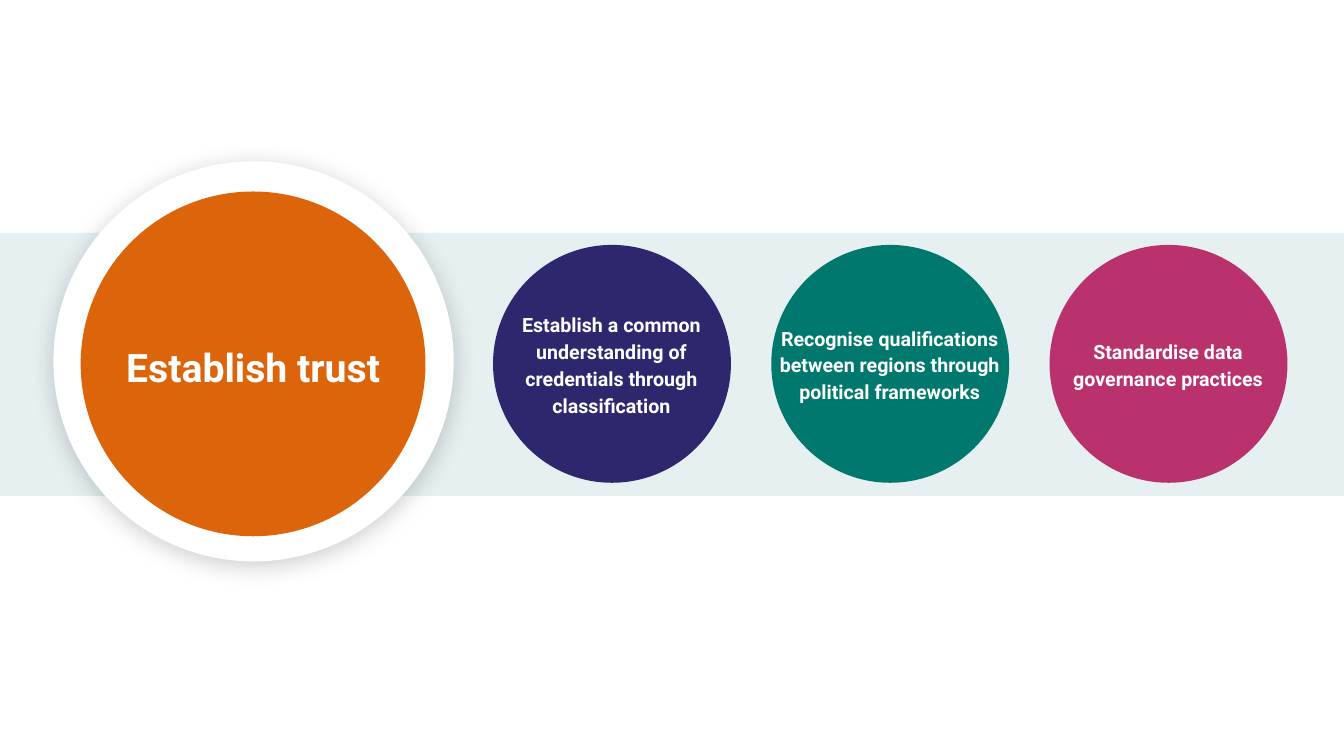
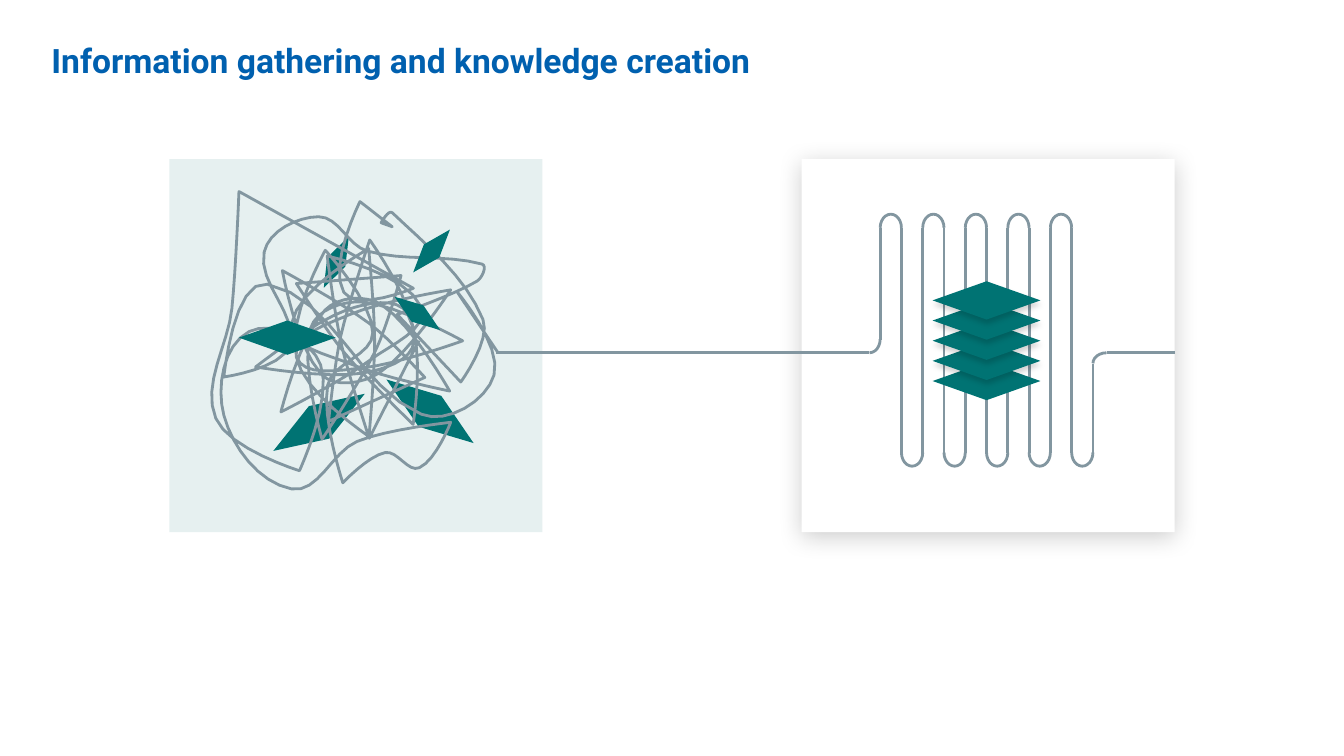
from math import cos, hypot, sin

from lxml import etree
from pptx import Presentation
from pptx.dml.color import RGBColor
from pptx.enum.shapes import MSO_CONNECTOR, MSO_SHAPE
from pptx.enum.text import MSO_ANCHOR, PP_ALIGN
from pptx.oxml.ns import qn
from pptx.util import Inches, Pt

RECT, OVAL = MSO_SHAPE.RECTANGLE, MSO_SHAPE.OVAL
DIAMOND, ARC = MSO_SHAPE.DIAMOND, MSO_SHAPE.ARC
STRAIGHT = MSO_CONNECTOR.STRAIGHT
TOP, MIDDLE = MSO_ANCHOR.TOP, MSO_ANCHOR.MIDDLE
LEFT, CENTER = PP_ALIGN.LEFT, PP_ALIGN.CENTER

FONT = "Roboto"
WHITE = RGBColor(0xFF, 0xFF, 0xFF)
MIST = RGBColor(0xE6, 0xF0, 0xF0)
ORANGE = RGBColor(0xDC, 0x64, 0x0A)
INDIGO = RGBColor(0x2D, 0x28, 0x6E)
GREEN = RGBColor(0x00, 0x78, 0x6D)
MAGENTA = RGBColor(0xB9, 0x32, 0x6E)
TEAL = RGBColor(0x00, 0x73, 0x73)
BLUE = RGBColor(0x00, 0x60, 0xAF)
GREY = RGBColor(0x82, 0x96, 0xA0)

# Shadows: opacity in percent, blur in points
SOFT, TIGHT = (20, 18), (16, 4)

# Slide 1 content
MAIN_GOAL = "Establish trust"
STEPS = [
    ("Establish a common understanding of credentials through classification", INDIGO),
    ("Recognise qualifications between regions through political frameworks", GREEN),
    ("Standardise data governance practices", MAGENTA),
]

# Slide 2 content
TITLE = "Information gathering and knowledge creation"
# Loose diamonds: left, top, width, height, rotation
DIAMONDS_BEHIND = [
    (2.63, 4, 1.07, 0.38, 328),
    (3.05, 2.5, 0.57, 0.2, 115.9),
    (3.73, 3.89, 1.07, 0.38, 36.1),
]
DIAMONDS_IN_FRONT = [
    (2.37, 3.18, 0.96, 0.34, 0),
    (3.86, 3.01, 0.56, 0.2, 36.1),
    (4, 2.39, 0.56, 0.2, 130.6),
]
# Outer loops of the tangled thread, in inches
OUTER_LOOPS = [
    (3.25, 3.82), (3.4, 4.79), (3.82, 4.49), (4.16, 4.64), (4.47, 4.19), (3.54, 4.38),
    (2.89, 4.85), (2.22, 4.12), (2.47, 3.29), (3.18, 3.62), (2.97, 4.67), (2.14, 4.15),
    (2.3, 3.06), (2.37, 1.9), (4.1, 2.86), (3.41, 2.9), (3.57, 2), (3.89, 2.25),
    (3.78, 2.21), (3.89, 2.11), (4.79, 3.17), (4.57, 3.79), (3.94, 3.12), (4.73, 2.79),
    (4.78, 2.62), (3.64, 2.49), (3.16, 2.15), (2.62, 2.5), (2.87, 3.43), (2.22, 3.74),
    (2.65, 2.82), (4.18, 4.11), (4.9, 3.72), (4.53, 2.89),
]
THREAD_END = (4.94, 3.5)


def add_effects(s, shadow=None):
    effects = etree.SubElement(s._element.spPr, qn("a:effectLst"))
    if shadow:
        opacity, blur = shadow
        outer = etree.SubElement(effects, qn("a:outerShdw"), blurRad=str(Pt(blur)),
                                 dist=str(Pt(3)), dir="5400000", algn="ctr", rotWithShape="0")
        color = etree.SubElement(outer, qn("a:srgbClr"), val="000000")
        etree.SubElement(color, qn("a:alpha"), val=str(opacity * 1000))


def add_block(slide, kind, left, top, width, height, color, rotation=0, shadow=None):
    s = slide.shapes.add_shape(kind, Inches(left), Inches(top), Inches(width), Inches(height))
    s.fill.solid()
    s.fill.fore_color.rgb = color
    s.line.fill.background()
    s.rotation = rotation
    add_effects(s, shadow)


def add_text(slide, text, left, top, width, height, *, size, color=WHITE,
             align=CENTER, anchor=MIDDLE, spacing=1.14):
    tf = slide.shapes.add_textbox(Inches(left), Inches(top), Inches(width),
                                  Inches(height)).text_frame
    tf.word_wrap = True
    tf.vertical_anchor = anchor
    tf.margin_left = tf.margin_right = tf.margin_top = tf.margin_bottom = 0
    p = tf.paragraphs[0]
    p.alignment, p.line_spacing = align, spacing
    r = p.add_run()
    r.text = text
    r.font.name, r.font.size, r.font.bold = FONT, Pt(size), True
    r.font.color.rgb = color


def style_thread(s):
    s.line.color.rgb = GREY
    s.line.width = Pt(2)
    add_effects(s)


def add_thread(slide, x1, y1, x2, y2):
    style_thread(slide.shapes.add_connector(STRAIGHT, Inches(x1), Inches(y1),
                                            Inches(x2), Inches(y2)))


def add_arc(slide, left, top, width, height, start, end):
    """Arc running clockwise from start to end, in degrees."""
    s = slide.shapes.add_shape(ARC, Inches(left), Inches(top), Inches(width), Inches(height))
    s.adjustments[0], s.adjustments[1] = start * 0.6, end * 0.6
    s.fill.background()
    style_thread(s)


def inner_knot(count=44):
    """Points that circle the middle of the tangle at a changing distance."""
    points = []
    for i in range(count):
        angle = 1.45 * i
        reach = 0.55 + 0.4 * sin(2.3 * i)
        points.append((3.55 + 1.1 * reach * cos(angle), 3.38 + 1.15 * reach * sin(angle)))
    return points


def tangent(before, here, after):
    """Unit direction of the thread at a point; zero where it turns sharply."""
    ax, ay = here[0] - before[0], here[1] - before[1]
    bx, by = after[0] - here[0], after[1] - here[1]
    if ax * bx + ay * by < -0.34 * hypot(ax, ay) * hypot(bx, by):
        return 0, 0
    dx, dy = ax + bx, ay + by
    length = hypot(dx, dy) or 1
    return dx / length, dy / length


def smooth(points, steps=8):
    """Points of a soft curve through the given points."""
    padded = [points[0], *points, points[-1]]
    tangents = [tangent(*trio) for trio in zip(padded, points, padded[2:])]
    curve = [points[0]]
    for a, b, ta, tb in zip(points, points[1:], tangents, tangents[1:]):
        reach = hypot(b[0] - a[0], b[1] - a[1]) / 3
        for t in (i / steps for i in range(1, steps + 1)):
            u = 1 - t
            curve.append(tuple(
                u**3 * a[k] + 3 * u * u * t * (a[k] + reach * ta[k])
                + 3 * u * t * t * (b[k] - reach * tb[k]) + t**3 * b[k]
                for k in (0, 1)))
    return curve


def add_tangle(slide, points):
    start, *rest = [(Inches(x), Inches(y)) for x, y in smooth(points)]
    builder = slide.shapes.build_freeform(*start)
    builder.add_line_segments(rest, close=False)
    s = builder.convert_to_shape()
    s.fill.background()
    style_thread(s)


def build_goals(slide):
    add_block(slide, RECT, 0, 2.31, 13.33, 2.61, MIST)
    for i, (text, color) in enumerate(STEPS):
        left = 4.89 + i * 2.76
        add_block(slide, OVAL, left, 2.43, 2.36, 2.36, color)
        add_text(slide, text, left + 0.08, 2.56, 2.19, 2.09, size=14)
    # Main goal
    add_block(slide, OVAL, 0.53, 1.6, 3.97, 3.97, WHITE, shadow=SOFT)
    add_block(slide, OVAL, 0.8, 1.9, 3.42, 3.42, ORANGE)
    add_text(slide, MAIN_GOAL, 0.92, 2.09, 3.18, 3.04, size=28)


def build_knowledge(slide):
    add_text(slide, TITLE, 0.51, 0.38, 12.28, 0.45, size=24, color=BLUE,
             align=LEFT, anchor=TOP, spacing=Pt(30))
    # Panels
    add_block(slide, RECT, 1.68, 1.58, 3.7, 3.7, MIST)
    add_block(slide, RECT, 7.95, 1.58, 3.7, 3.7, WHITE, shadow=SOFT)

    # Tangled thread with loose diamonds
    for *box, rotation in DIAMONDS_BEHIND:
        add_block(slide, DIAMOND, *box, TEAL, rotation=rotation)
    add_tangle(slide, [*inner_knot(), *OUTER_LOOPS, THREAD_END])
    for *box, rotation in DIAMONDS_IN_FRONT:
        add_block(slide, DIAMOND, *box, TEAL, rotation=rotation)

    # Ordered thread: vertical runs joined by alternating half turns
    first, last, runs = 8.73, 10.84, 11
    high, low, middle = 2.26, 4.49, 3.5
    turn_h = 0.27
    gap = (last - first) / (runs - 1)
    for i in range(runs):
        x = first + i * gap
        top = 3.61 if i == runs - 1 else high
        bottom = 3.37 if i == 0 else low
        add_thread(slide, x, bottom, x, top)
        if i == runs - 1:
            break
        if i % 2 == 0:
            add_arc(slide, x, high - turn_h / 2, gap, turn_h, 180, 0)
        else:
            add_arc(slide, x, low - turn_h / 2, gap, turn_h, 0, 180)
    add_arc(slide, first - gap, middle - turn_h, gap, turn_h, 0, 90)

    # Stack of diamonds, bottom one first
    for i in range(5):
        add_block(slide, DIAMOND, 9.25, 3.59 - i * 0.2, 1.07, 0.38, TEAL,
                  shadow=TIGHT if i else None)

    # Thread into and out of the ordered panel
    add_thread(slide, 8.62, middle, 4.92, middle)
    add_arc(slide, last, middle, turn_h, gap, 180, 270)
    add_thread(slide, 11.65, middle, 10.98, middle)


def main():
    prs = Presentation()
    prs.slide_width, prs.slide_height = Inches(13.33), Inches(7.5)
    blank = prs.slide_layouts[6]
    for build in (build_goals, build_knowledge):
        build(prs.slides.add_slide(blank))
    prs.save("out.pptx")


if __name__ == "__main__":
    main()
